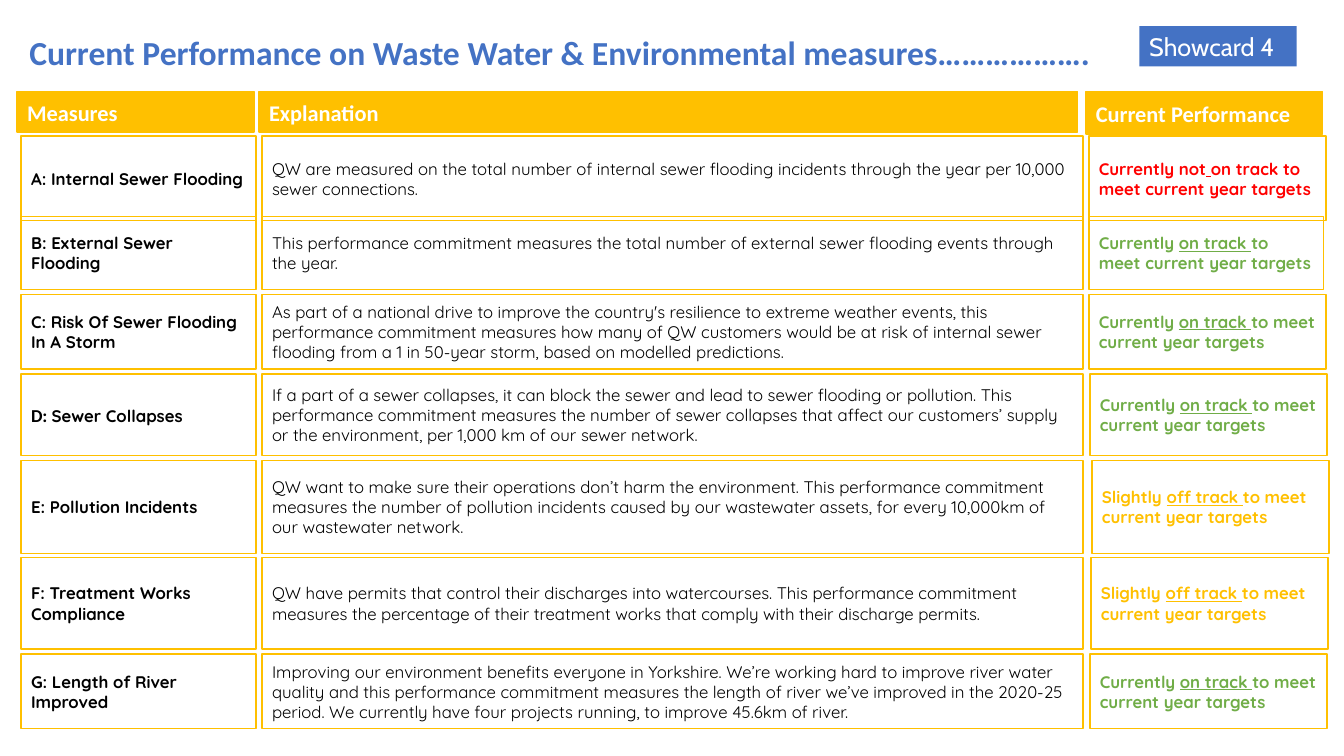
import pptx
import pptx.dml.color
import pptx.enum.shapes
import pptx.enum.text
import pptx.util
from dataclasses import dataclass

Inches = pptx.util.Inches
Pt = pptx.util.Pt
MIDDLE = pptx.enum.text.MSO_ANCHOR.MIDDLE
TOP = pptx.enum.text.MSO_ANCHOR.TOP
LEFT = pptx.enum.text.PP_ALIGN.LEFT


@dataclass(frozen=True)
class Theme:
    blue: str = "4472C4"
    gold: str = "FFC000"
    white: str = "FFFFFF"
    black: str = "000000"
    red: str = "FF0000"
    green: str = "70AD47"
    heading_font: str = "Calibri"
    card_font: str = "Cabin"
    body_font: str = "Quicksand"
    title_size: int = 24
    card_size: int = 18
    header_size: int = 16
    letter_size: int = 13
    body_size: int = 12


theme = Theme()


def write(paragraph, words, font, size, color, bold=False, underline=None):
    span = paragraph.add_run()
    span.text = words
    span.font.name = font
    span.font.size = Pt(size)
    span.font.color.rgb = pptx.dml.color.RGBColor.from_string(color)
    span.font.bold = bold
    span.font.underline = underline


def add_box(left, top, width, height, fill=None, line=None, anchor=MIDDLE):
    box = page.shapes.add_shape(
        pptx.enum.shapes.MSO_SHAPE.RECTANGLE,
        Inches(left), Inches(top), Inches(width), Inches(height))
    box.shadow.inherit = False
    if fill:
        box.fill.solid()
        box.fill.fore_color.rgb = pptx.dml.color.RGBColor.from_string(fill)
    else:
        box.fill.background()
    if line:
        box.line.color.rgb = pptx.dml.color.RGBColor.from_string(line)
        box.line.width = Pt(1)
    else:
        box.line.fill.background()
    box.text_frame.word_wrap = True
    box.text_frame.vertical_anchor = anchor
    para = box.text_frame.paragraphs[0]
    para.alignment = LEFT
    return para


deck = pptx.Presentation()
deck.slide_width = Inches(13.33)
deck.slide_height = Inches(7.5)
page = deck.slides.add_slide(deck.slide_layouts[5])

title = page.shapes.title
title.left, title.top = Inches(0.19), Inches(0.2)
title.width, title.height = Inches(11.5), Inches(0.69)
title.text_frame.word_wrap = True
title.text_frame.vertical_anchor = MIDDLE
title_para = title.text_frame.paragraphs[0]
title_para.alignment = LEFT
title_para.line_spacing = 0.9
write(title_para, "Current Performance on Waste Water & Environmental measures……………….",
      theme.heading_font, theme.title_size, theme.blue, bold=True)

card_para = add_box(11.3, 0.26, 1.56, 0.4, fill=theme.blue, anchor=TOP)
write(card_para, "Showcard 4", theme.card_font, theme.card_size, theme.white)

headers = [
    ("Measures", 0.17, 2.35, 0.4),
    ("Explanation", 2.57, 8.12, 0.4),
    ("Current Performance", 10.77, 2.35, 0.42),
]
for heading, left, width, height in headers:
    header_para = add_box(left, 0.91, width, height, fill=theme.gold, line=theme.gold)
    header_para.line_spacing = 1.07
    header_para.space_after = Pt(8)
    write(header_para, heading, theme.heading_font, theme.header_size, theme.white, bold=True)

not_on_track = (theme.red, "Currently not", " ", "on track to meet current year targets")
on_track = (theme.green, "Currently ", "on track ", "to meet current year targets")
off_track = (theme.gold, "Slightly ", "off track ", "to meet current year targets")

measures = [
    (1.35, 0.84, "A: Internal Sewer Flooding",
     "QW are measured on the total number of internal sewer flooding incidents through "
     "the year per 10,000 sewer connections.",
     not_on_track, 10.8, 2.35),
    (2.15, 0.72, "B: External Sewer Flooding",
     "This performance commitment measures the total number of external sewer flooding "
     "events through the year.",
     on_track, 10.8, 2.33),
    (2.92, 0.74, "C: Risk Of Sewer Flooding In A Storm",
     "As part of a national drive to improve the country's resilience to extreme weather "
     "events, this performance commitment measures how many of QW customers would be at "
     "risk of internal sewer flooding from a 1 in 50-year storm, based on modelled predictions.",
     on_track, 10.8, 2.35),
    (3.71, 0.81, "D: Sewer Collapses",
     "If a part of a sewer collapses, it can block the sewer and lead to sewer flooding or "
     "pollution. This performance commitment measures the number of sewer collapses that "
     "affect our customers’ supply or the environment, per 1,000 km of our sewer network.",
     on_track, 10.81, 2.35),
    (4.57, 0.92, "E: Pollution Incidents",
     "QW want to make sure their operations don’t harm the environment. This performance "
     "commitment measures the number of pollution incidents caused by our wastewater "
     "assets, for every 10,000km of our wastewater network.",
     off_track, 10.83, 2.35),
    (5.53, 0.91, "F: Treatment Works Compliance",
     "QW have permits that control their discharges into watercourses. This performance "
     "commitment measures the percentage of their treatment works that comply with their "
     "discharge permits.",
     off_track, 10.82, 2.35),
    (6.49, 0.74, "G: Length of River Improved",
     "Improving our environment benefits everyone in Yorkshire. We’re working hard to "
     "improve river water quality and this performance commitment measures the length of "
     "river we’ve improved in the 2020-25 period. We currently have four projects running, "
     "to improve 45.6km of river.",
     on_track, 10.81, 2.35),
]
for top, height, measure, explanation, status, status_left, status_width in measures:
    measure_para = add_box(0.21, top, 2.33, height, line=theme.gold)
    if measure.startswith("D: "):
        write(measure_para, "D: ", theme.heading_font, theme.letter_size, theme.black, bold=True)
        measure = measure.removeprefix("D: ")
    write(measure_para, measure, theme.body_font, theme.body_size, theme.black, bold=True)

    explanation_para = add_box(2.6, top, 8.14, height, line=theme.gold)
    write(explanation_para, explanation, theme.body_font, theme.body_size, theme.black)

    status_para = add_box(status_left, top, status_width, height, line=theme.gold)
    color, *phrases = status
    for phrase, underline in zip(phrases, (False, True, False)):
        write(status_para, phrase, theme.body_font, theme.body_size, color,
              bold=True, underline=underline)

deck.save("out.pptx")
